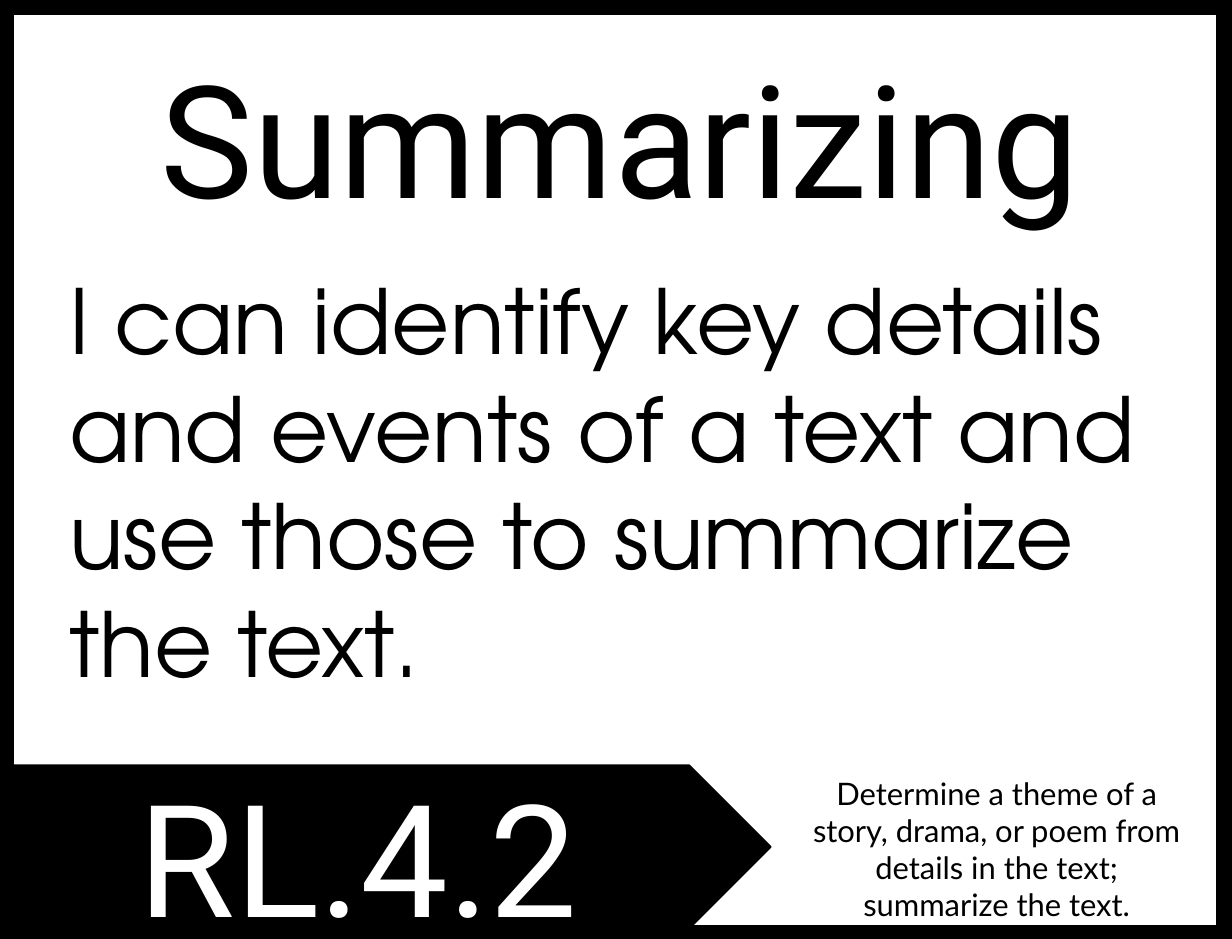
from pptx import Presentation
from pptx import util as u
from pptx.dml.color import RGBColor
from pptx.enum import shapes, text

PX = 9144  # EMU per px, 100 px to the inch
SLIDE_SIZE = (1050, 800)

THEME = {
    "ink": RGBColor(0, 0, 0),
    "paper": RGBColor(255, 255, 255),
    "display": ("Roboto", 96),
    "goal": ("TeX Gyre Adventor", 55),
    "standard": ("Lato", 19),
}

# Preset, box, fill, line width in points
PANELS = [
    (shapes.MSO_SHAPE.RECTANGLE, (8, 9, 1033, 783), "paper", 6),
    (shapes.MSO_SHAPE.PENTAGON, (8, 652, 649, 139), "ink", 1),
]

TITLE = ("Summarizing", (8, 31, 1042, 172), "display", "ink", "CENTER")

# Words, box, type style, colour, alignment
TEXTS = [
    ("RL.4.2", (49, 643, 513, 172), "display", "paper", "CENTER"),
    ("Determine a theme of a story, drama, or poem from details in the text; "
     "summarize the text.", (683, 655, 333, 106), "standard", "ink", "CENTER"),
    ("I can identify key details and events of a text and use those to "
     "summarize the text.", (49, 221, 929, 380), "goal", "ink", "LEFT"),
]


def emu(box):
    return [length * PX for length in box]


def add_panel(slide, preset, box, fill, line_width):
    panel = slide.shapes.add_shape(preset, *emu(box))
    panel.shadow.inherit = False
    panel.fill.solid()
    panel.fill.fore_color.rgb = THEME[fill]
    panel.line.color.rgb = THEME["ink"]
    panel.line.width = u.Pt(line_width)


def write(holder, words, box, style, colour, alignment):
    """Place a text holder and set its words in one theme style."""
    holder.left, holder.top, holder.width, holder.height = emu(box)
    frame = holder.text_frame
    frame.text = words
    frame.word_wrap = True
    frame.auto_size = text.MSO_AUTO_SIZE.NONE
    frame.vertical_anchor = text.MSO_ANCHOR.TOP
    paragraph = frame.paragraphs[0]
    paragraph.alignment = text.PP_ALIGN[alignment]
    font = paragraph.runs[0].font
    font.name, size = THEME[style]
    font.size = u.Pt(size)
    font.color.rgb = THEME[colour]


def main():
    deck = Presentation()
    deck.slide_width, deck.slide_height = emu(SLIDE_SIZE)
    slide = deck.slides.add_slide(deck.slide_layouts[5])
    slide.background.fill.solid()
    slide.background.fill.fore_color.rgb = THEME["ink"]

    for panel in PANELS:
        add_panel(slide, *panel)
    for words, box, *look in TEXTS:
        write(slide.shapes.add_textbox(*emu(box)), words, box, *look)

    title = slide.shapes.title
    write(title, *TITLE)
    title.element.getparent().append(title.element)  # in front of the panels

    deck.save("out.pptx")


if __name__ == "__main__":
    main()
